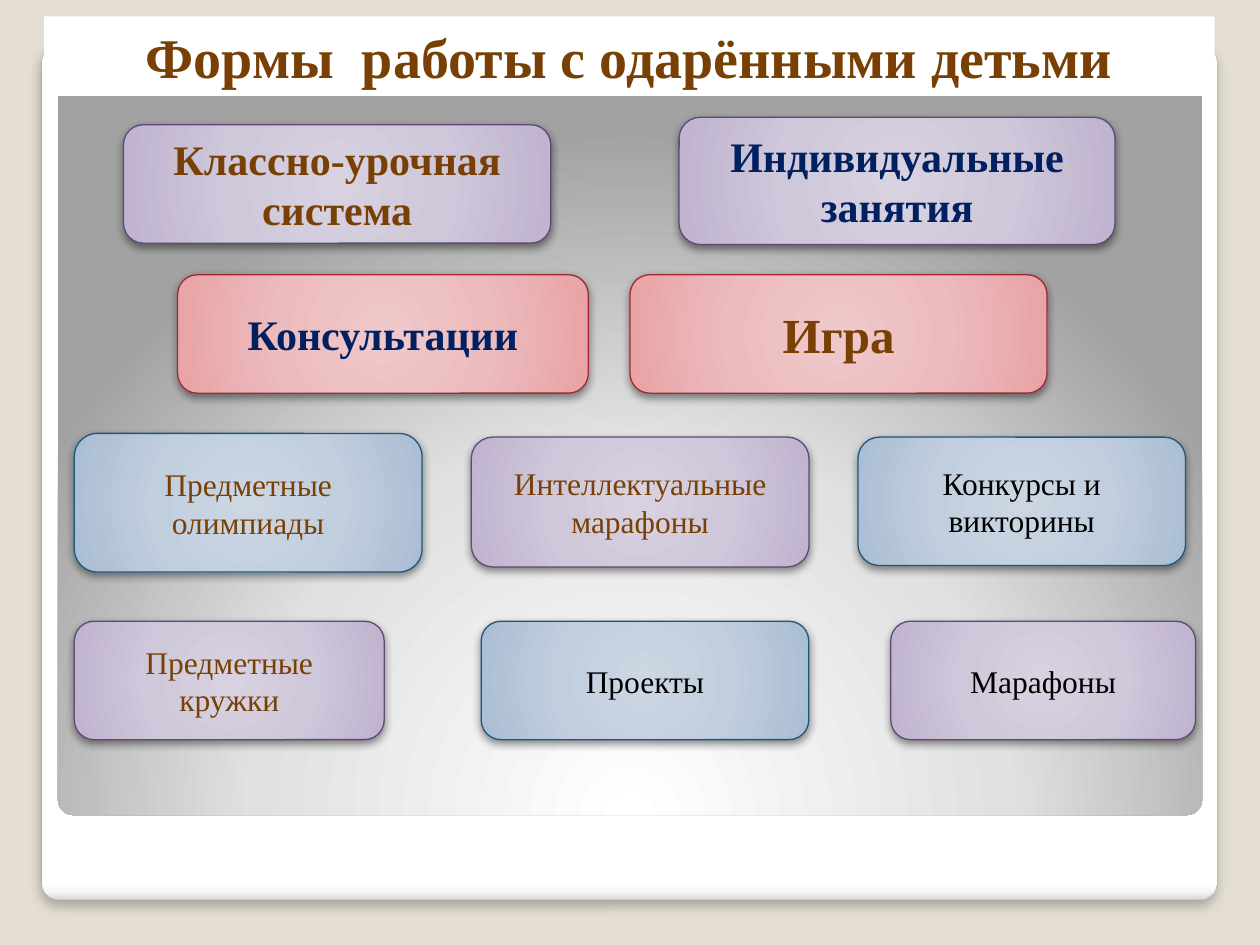
from dataclasses import dataclass

from lxml import etree
from pptx import Presentation
from pptx import util as u
from pptx.dml.color import RGBColor
from pptx.enum import shapes, text
from pptx.oxml import ns

FONT = "Times New Roman"
HEX = {
    "back": "E3DED1", "white": "FFFFFF", "rim": "A4A4A4", "black": "000000",
    "brown": "784004", "navy": "002060",
    "violet": "604878", "red": "9F2936", "blue": "1B587C",
}
# Gradient stops: position in percent, colour
GRADS = {
    "frame": [(0, "FFFFFF"), (98, "FFFFFF"), (99, "F7F7F7"), (100, "DADADA")],
    "panel": [(0, "FFFFFF"), (55, "E1E1E1"), (100, "A2A2A2")],
    "violet": [(0, "D8D2E0"), (50, "CFC7DA"), (97, "C0B4CF"), (100, "BBAECD")],
    "red": [(0, "EFC9CA"), (50, "ECBBBD"), (97, "E8A4A7"), (100, "E99B9E")],
    "blue": [(0, "CDD7E3"), (50, "C1CEDE"), (97, "ACBED4"), (100, "A4B9D3")],
}
MID = (50, 50, 50, 50)
LOW = (50, 175, 50, -75)


@dataclass
class Box:
    words: str
    x: float
    y: float
    w: float
    h: float
    hue: str
    ink: str = "brown"
    size: int = 18
    bold: bool = False


BOXES = [
    # Lessons
    Box("Классно-урочная система", 70.6, 71.3, 244.1, 67.7, "violet", "brown", 24, True),
    Box("Индивидуальные занятия", 388.1, 67, 249.1, 72.7, "violet", "navy", 24, True),
    # Talks and play
    Box("Консультации", 101.5, 157, 234.7, 67.7, "red", "navy", 24, True),
    Box("Игра", 360, 157, 238.3, 67.7, "red", "brown", 28, True),
    # Contests
    Box("Предметные олимпиады", 42.5, 247.7, 198.7, 79.2, "blue"),
    Box("Интеллектуальные марафоны", 269.3, 249.8, 193, 74.2, "violet"),
    Box("Конкурсы и викторины", 490.3, 249.8, 187.2, 73.4, "blue", "black"),
    # Clubs and projects
    Box("Предметные кружки", 42.5, 355, 177.1, 67.7, "violet"),
    Box("Проекты", 275, 355, 187.2, 67.7, "blue", "black"),
    Box("Марафоны", 509, 355, 174.2, 67.7, "violet", "black"),
]


def paint(name: str) -> RGBColor:
    return RGBColor.from_string(HEX[name])


def node(up, tag: str, **attrs):
    return etree.SubElement(up, ns.qn(tag), {k: str(v) for k, v in attrs.items()})


def blend(shape, name: str, rect=None) -> None:
    """Fill with a circular gradient, or a downward one if rect is None."""
    shape.fill.solid()
    old = shape._element.spPr.find(ns.qn("a:solidFill"))
    grad = etree.Element(ns.qn("a:gradFill"), rotWithShape="1")
    stops = node(grad, "a:gsLst")
    for pos, tone in GRADS[name]:
        node(node(stops, "a:gs", pos=pos * 1000), "a:srgbClr", val=tone)
    if rect is None:
        node(grad, "a:lin", ang=90 * 60000, scaled=0)
    else:
        sides = {k: v * 1000 for k, v in zip("ltrb", rect)}
        node(node(grad, "a:path", path="circle"), "a:fillToRect", **sides)
    old.getparent().replace(old, grad)


def shade(shape, alpha: int, blur: float, dist: float) -> None:
    """Cast a black shadow straight down."""
    fx = shape._element.spPr.find(ns.qn("a:effectLst"))
    cast = node(fx, "a:outerShdw", blurRad=u.Pt(blur), dist=u.Pt(dist),
                dir=90 * 60000, algn="ctr", rotWithShape=0)
    tone = node(cast, "a:srgbClr", val=HEX["black"])
    node(tone, "a:alpha", val=alpha * 1000)


def block(slide, x: float, y: float, w: float, h: float,
          kind=shapes.MSO_SHAPE.ROUNDED_RECTANGLE):
    shape = slide.shapes.add_shape(kind, u.Pt(x), u.Pt(y), u.Pt(w), u.Pt(h))
    shape.shadow.inherit = False
    shape.line.fill.background()
    return shape


def edge(shape, name: str, width: float) -> None:
    shape.line.color.rgb = paint(name)
    shape.line.width = u.Pt(width)


def write(shape, words: str, ink: str, size: int, bold: bool, anchor) -> None:
    frame = shape.text_frame
    frame.word_wrap = True
    frame.vertical_anchor = anchor
    frame.text = words
    para = frame.paragraphs[0]
    para.alignment = text.PP_ALIGN.CENTER
    font = para.runs[0].font
    font.name, font.size, font.bold = FONT, u.Pt(size), bold
    font.color.rgb = paint(ink)


def draw(slide, box: Box) -> None:
    shape = block(slide, box.x, box.y, box.w, box.h)
    blend(shape, box.hue, MID)
    edge(shape, box.hue, 0.75)
    shade(shape, 43, 5, 2)
    write(shape, box.words, box.ink, box.size, box.bold, text.MSO_ANCHOR.MIDDLE)


def main() -> None:
    deck = Presentation()
    deck.slide_width, deck.slide_height = u.Pt(720), u.Pt(540)
    slide = deck.slides.add_slide(deck.slide_layouts[6])
    back = slide.background.fill
    back.solid()
    back.fore_color.rgb = paint("back")

    # White frame
    frame = block(slide, 23.8, 25.9, 671.8, 488.2)
    frame.adjustments[0] = 0.02
    blend(frame, "frame")
    edge(frame, "rim", 0.16)
    shade(frame, 25, 6, 4)

    # Grey panel
    panel = block(slide, 33.1, 33.8, 653.8, 432)
    panel.adjustments[0] = 0.02
    blend(panel, "panel", LOW)

    # Title band
    title = block(slide, 25.2, 9.4, 668.9, 45.4, shapes.MSO_SHAPE.RECTANGLE)
    title.fill.solid()
    title.fill.fore_color.rgb = paint("white")
    write(title, "Формы  работы с одарёнными детьми", "brown", 32, True,
          text.MSO_ANCHOR.BOTTOM)

    # Forms of work
    for box in BOXES:
        draw(slide, box)

    deck.save("out.pptx")


if __name__ == "__main__":
    main()
